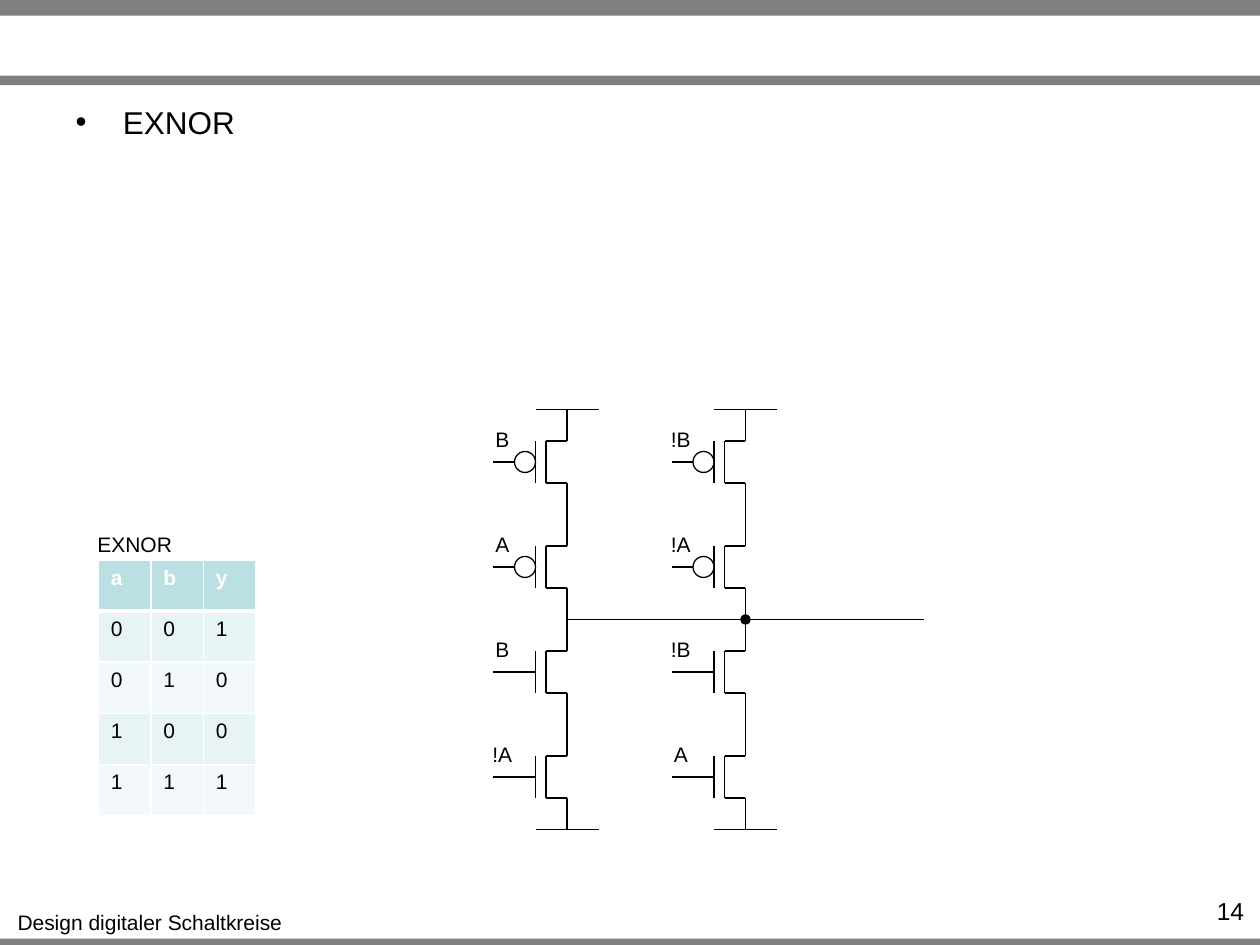
from typing import NamedTuple

from pptx import Presentation
from pptx.dml.color import RGBColor
from pptx.enum.shapes import MSO_CONNECTOR, MSO_SHAPE
from pptx.enum.text import MSO_ANCHOR, MSO_AUTO_SIZE, PP_ALIGN
from pptx.oxml.ns import qn
from pptx.util import Pt
from lxml.etree import SubElement

BLACK, WHITE, GREY = "000000", "FFFFFF", "808080"
HEADER_FILL, ODD_FILL, EVEN_FILL = "BBE0E3", "E7F3F4", "F3F9FA"

# Circuit grid: every branch is a column of four stages between two rails.
SUPPLY_Y = 234
STAGE_HEIGHT = 60
OUTPUT_Y = SUPPLY_Y + 2 * STAGE_HEIGHT
GROUND_Y = SUPPLY_Y + 4 * STAGE_HEIGHT
OUTPUT_END_X = 528
RAIL_HALF = 18


class Bar(NamedTuple):
    top: float
    height: float


class Label(NamedTuple):
    text: str
    left: float
    top: float
    width: float
    height: float
    size: float = 12
    align: PP_ALIGN = PP_ALIGN.CENTER
    wrap: bool = False


class Branch(NamedTuple):
    x: float
    inputs: tuple[str, ...]  # two PMOS gates, then two NMOS gates


BARS = (Bar(536.4, 5.4), Bar(0, 9), Bar(43.2, 5.4))
LABELS = (
    Label("Design digitaler Schaltkreise", 2.2, 516.2, 167, 22),
    Label("14", 655, 508.3, 63, 17, 14, PP_ALIGN.RIGHT, True),
    Label("EXNOR", 48, 300, 58, 22),
)
BRANCHES = (
    Branch(324, ("B", "A", "B", "!A")),
    Branch(426, ("!B", "!A", "!B", "A")),
)
TRUTH_TABLE = ("aby", "001", "010", "100", "111")


def rgb(value: str) -> RGBColor:
    return RGBColor.from_string(value)


def style_font(font, size: float, color: str = BLACK, bold: bool = False) -> None:
    font.name = "Arial"
    font.size = Pt(size)
    font.bold = bold
    font.color.rgb = rgb(color)


def add_bar(shapes, bar: Bar) -> None:
    strip = shapes.add_shape(
        MSO_SHAPE.RECTANGLE, 0, Pt(bar.top), Pt(720), Pt(bar.height))
    strip.shadow.inherit = False
    strip.fill.solid()
    strip.fill.fore_color.rgb = rgb(GREY)
    strip.line.fill.background()


def add_label(shapes, label: Label) -> None:
    box = shapes.add_textbox(
        Pt(label.left), Pt(label.top), Pt(label.width), Pt(label.height))
    frame = box.text_frame
    frame.word_wrap = label.wrap
    frame.auto_size = (MSO_AUTO_SIZE.NONE if label.wrap
                       else MSO_AUTO_SIZE.SHAPE_TO_FIT_TEXT)
    frame.text = label.text
    paragraph = frame.paragraphs[0]
    paragraph.alignment = label.align
    style_font(paragraph.runs[0].font, label.size)


def add_wire(shapes, x1: float, y1: float, x2: float, y2: float,
             dot_at_end: bool = False) -> None:
    wire = shapes.add_connector(
        MSO_CONNECTOR.STRAIGHT, Pt(x1), Pt(y1), Pt(x2), Pt(y2))
    wire.line.color.rgb = rgb(BLACK)
    wire.line.width = Pt(0.75)
    properties = wire._element.spPr
    if dot_at_end:
        SubElement(properties.find(qn("a:ln")), qn("a:tailEnd"), type="oval")
    SubElement(properties, qn("a:effectLst"))


def add_transistor(shapes, x: float, top: float, is_pmos: bool) -> None:
    """Draw one stage whose drain and source lie on the vertical at x."""
    parts = shapes.add_group_shape().shapes
    upper, middle, lower = top + 18, top + 30, top + 42
    channel, gate, bubble, lead = x - 12, x - 18, x - 30, x - 42
    add_wire(parts, x, top, x, upper)
    add_wire(parts, x, upper, channel, upper)
    add_wire(parts, channel, upper, channel, lower)
    add_wire(parts, x, lower, channel, lower)
    add_wire(parts, x, lower, x, top + STAGE_HEIGHT)
    add_wire(parts, gate, upper, gate, lower)
    add_wire(parts, bubble, middle, lead, middle)
    add_wire(parts, bubble, middle, gate, middle)
    if is_pmos:
        inverter = parts.add_shape(
            MSO_SHAPE.OVAL, Pt(bubble), Pt(middle - 6), Pt(12), Pt(12))
        inverter.shadow.inherit = False
        inverter.fill.solid()
        inverter.fill.fore_color.rgb = rgb(WHITE)
        inverter.line.color.rgb = rgb(BLACK)
        inverter.line.width = Pt(0.75)


def add_branch(shapes, branch: Branch) -> None:
    for rail_y in (SUPPLY_Y, GROUND_Y):
        add_wire(shapes, branch.x + RAIL_HALF, rail_y, branch.x - RAIL_HALF, rail_y)
    for stage, signal in enumerate(branch.inputs):
        top = SUPPLY_Y + stage * STAGE_HEIGHT
        add_transistor(shapes, branch.x, top, is_pmos=stage < 2)
        width = 22 if len(signal) == 1 else 26
        add_label(shapes, Label(signal, branch.x - 37 - width / 2, top + 6, width, 22))


def set_borders(cell, top: float, bottom: float) -> None:
    properties = cell._tc.get_or_add_tcPr()
    for side, width in (("L", 1), ("R", 1), ("T", top), ("B", bottom)):
        border = SubElement(properties, qn(f"a:ln{side}"), w=str(Pt(width)))
        fill = SubElement(border, qn("a:solidFill"))
        SubElement(fill, qn("a:srgbClr"), val=WHITE)


def add_truth_table(shapes) -> None:
    rows, columns = len(TRUTH_TABLE), len(TRUTH_TABLE[0])
    table = shapes.add_table(
        rows, columns, Pt(56.2), Pt(320), Pt(30 * columns), Pt(29.2 * rows)).table
    table.horz_banding = False
    for r, values in enumerate(TRUTH_TABLE):
        is_header = r == 0
        fill = HEADER_FILL if is_header else ODD_FILL if r % 2 else EVEN_FILL
        for c, value in enumerate(values):
            cell = table.cell(r, c)
            set_borders(cell, 3 if r == 1 else 1, 3 if is_header else 1)
            cell.fill.solid()
            cell.fill.fore_color.rgb = rgb(fill)
            cell.text_frame.text = value
            paragraph = cell.text_frame.paragraphs[0]
            paragraph.alignment = PP_ALIGN.LEFT
            style_font(paragraph.runs[0].font, 12,
                       WHITE if is_header else BLACK, is_header)


def fill_body(body) -> None:
    body.left, body.top, body.width, body.height = Pt(36), Pt(55), Pt(648), Pt(114)
    frame = body.text_frame
    frame.text = "EXNOR"
    frame.auto_size = MSO_AUTO_SIZE.NONE
    frame.vertical_anchor = MSO_ANCHOR.TOP
    paragraph = frame.paragraphs[0]
    paragraph.space_before = Pt(0)
    properties = paragraph._p.get_or_add_pPr()
    properties.set("marL", str(Pt(27)))
    properties.set("indent", str(-Pt(27)))
    SubElement(properties, qn("a:buFont"), typeface="Arial")
    SubElement(properties, qn("a:buChar"), char="•")
    style_font(paragraph.runs[0].font, 18)


def main() -> None:
    presentation = Presentation()
    presentation.slide_width, presentation.slide_height = Pt(720), Pt(540)
    slide = presentation.slides.add_slide(presentation.slide_layouts[1])
    shapes = slide.shapes
    empty_title = shapes.title._element
    empty_title.getparent().remove(empty_title)

    fill_body(slide.placeholders[1])
    for bar in BARS:
        add_bar(shapes, bar)
    for label in LABELS:
        add_label(shapes, label)
    add_truth_table(shapes)
    for branch in BRANCHES:
        add_branch(shapes, branch)
    left_x, right_x = (branch.x for branch in BRANCHES)
    add_wire(shapes, left_x, OUTPUT_Y, right_x, OUTPUT_Y)
    add_wire(shapes, OUTPUT_END_X, OUTPUT_Y, right_x, OUTPUT_Y, dot_at_end=True)
    presentation.save("out.pptx")


if __name__ == "__main__":
    main()
